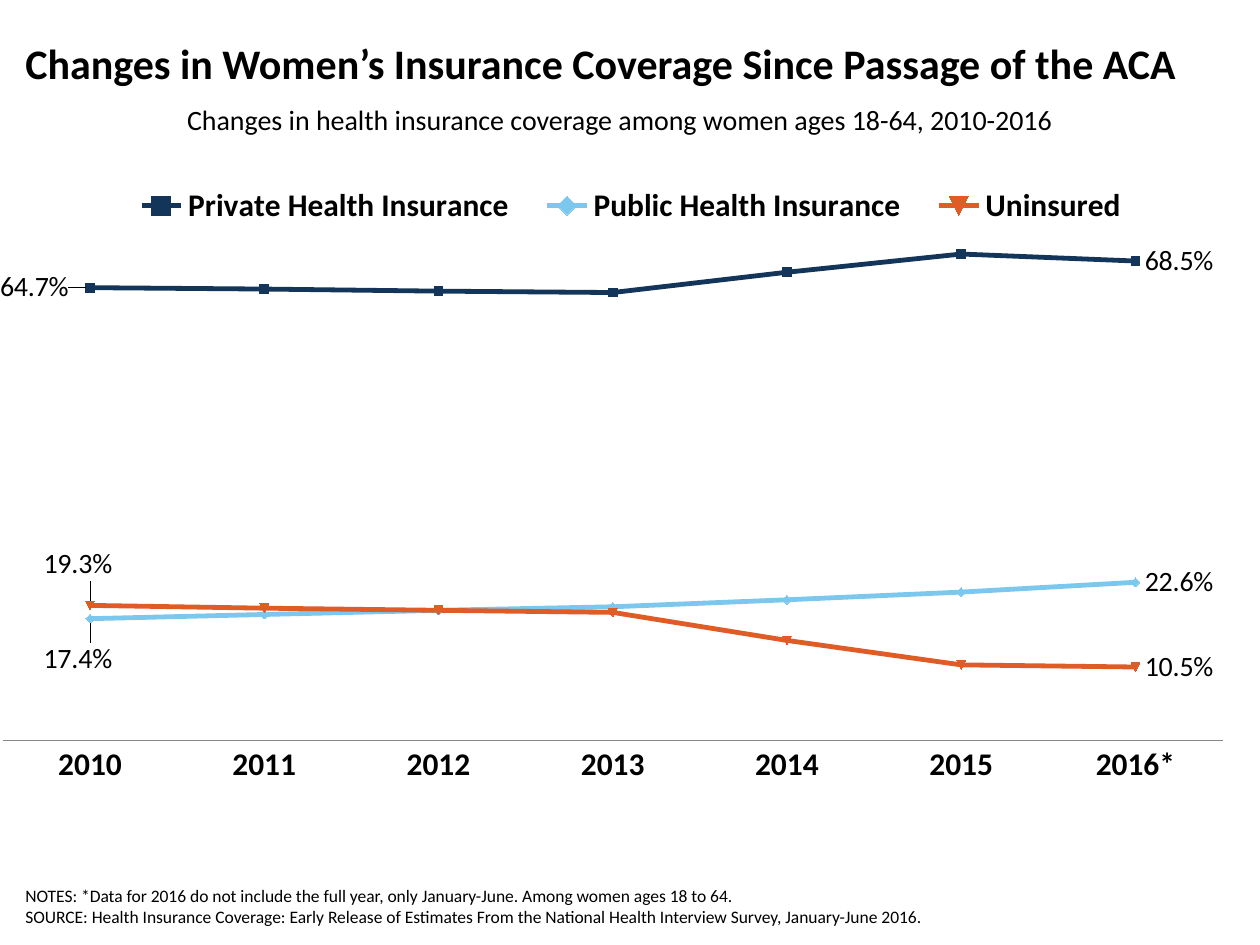
from lxml import etree
from pptx import Presentation
from pptx import util as u
from pptx.chart.data import CategoryChartData
from pptx.dml.color import RGBColor
from pptx.enum import chart as kinds, text
from pptx.oxml import ns

PX = 914400 // 126
BLACK = RGBColor(0x00, 0x00, 0x00)
GRAY = RGBColor(0x87, 0x87, 0x87)
NAVY = RGBColor(0x13, 0x35, 0x59)
SKY = RGBColor(0x7B, 0xC7, 0xED)
ORANGE = RGBColor(0xE0, 0x5C, 0x26)


def style_font(font, size, bold=False):
    values = {"name": "Calibri", "size": u.Pt(size), "bold": bold}
    for name, value in values.items():
        setattr(font, name, value)
    font.color.rgb = BLACK


def add_layout(parent, index, **values):
    layout = etree.Element(ns.qn("c:layout"))
    manual = etree.SubElement(layout, ns.qn("c:manualLayout"))
    for name, value in values.items():
        etree.SubElement(manual, ns.qn(f"c:{name}")).set("val", str(value))
    for old in parent.findall(ns.qn("c:layout")):
        parent.remove(old)
    parent.insert(index, layout)


deck = Presentation()
deck.slide_width, deck.slide_height = 1260 * PX, 945 * PX
page = deck.slides.add_slide(deck.slide_layouts[6])

coverage = CategoryChartData(number_format="0.0%")
coverage.categories = ["2010", "2011", "2012", "2013", "2014", "2015", "2016*"]
position = kinds.XL_LABEL_POSITION
groups = [
    ("Private Health Insurance", NAVY, position.LEFT, -0.01, 0,
     [0.647, 0.645, 0.642, 0.64, 0.669, 0.695, 0.685]),
    ("Public Health Insurance", SKY, position.BELOW, -0.01, 0.02,
     [0.174, 0.18, 0.186, 0.191, 0.201, 0.212, 0.226]),
    ("Uninsured", ORANGE, position.ABOVE, -0.01, -0.02,
     [0.193, 0.189, 0.186, 0.183, 0.143, 0.108, 0.105]),
]
for name, *_, values in groups:
    coverage.add_series(name, values)

chart = page.shapes.add_chart(
    kinds.XL_CHART_TYPE.LINE_MARKERS, 0, 116 * PX, 1235 * PX, 718 * PX, coverage
).chart
style_font(chart.font, 18)
chart.has_title = False
chart.has_legend = True
chart.legend.position = kinds.XL_LEGEND_POSITION.TOP
chart.legend.include_in_layout = False
style_font(chart.legend.font, 18, True)
add_layout(chart.legend._element, 1, xMode="edge", yMode="edge",
           x=0.09, y=0.09, w=0.84, h=0.07)
add_layout(chart._chartSpace.chart.plotArea, 0, layoutTarget="inner",
           xMode="edge", yMode="edge", x=0, y=0.09, w=0.99, h=0.78)

years, share = chart.category_axis, chart.value_axis
years.major_tick_mark = kinds.XL_TICK_MARK.NONE
years.format.line.color.rgb = GRAY
years.format.line.width = u.Pt(0.75)
style_font(years.tick_labels.font, 18, True)
for name, value in {"visible": False, "has_major_gridlines": False,
                    "minimum_scale": 0, "maximum_scale": 0.8}.items():
    setattr(share, name, value)

for series, (_, color, first_side, shift_x, shift_y, _) in zip(chart.plots[0].series, groups):
    series.smooth = False
    series.format.line.color.rgb = color
    series.format.line.width = u.Pt(2.75)
    marker = series.marker
    marker.style = kinds.XL_MARKER_STYLE.AUTOMATIC
    marker.size = 5
    marker.format.fill.solid()
    marker.format.fill.fore_color.rgb = color
    marker.format.line.color.rgb = color
    for point, side in ((0, first_side), (6, position.RIGHT)):
        label = series.points[point].data_label
        style_font(label.font, 16)
        label.position = side
    series.data_labels.show_value = False
    first_label = series._element.xpath("c:dLbls/c:dLbl")[0]
    add_layout(first_label, 1, x=shift_x, y=shift_y)

anchor, align = text.MSO_ANCHOR, text.PP_ALIGN
boxes = [
    (13, 0, 1235, 126, anchor.MIDDLE, align.LEFT, 24, True,
     ["Changes in Women’s Insurance Coverage Since Passage of the ACA"]),
    (158, 96, 924, 47, anchor.TOP, align.CENTER, 16, False,
     ["Changes in health insurance coverage among women ages 18-64, 2010-2016"]),
    (13, 857, 1147, 76, anchor.BOTTOM, align.LEFT, 10, False,
     ["NOTES: *Data for 2016 do not include the full year, only January-June. Among women ages 18 to 64.",
      "SOURCE: Health Insurance Coverage: Early Release of Estimates From the National Health Interview Survey, January-June 2016."]),
]
for left, top, width, height, vertical, side, size, bold, lines in boxes:
    box = page.shapes.add_textbox(left * PX, top * PX, width * PX, height * PX)
    frame = box.text_frame
    frame.word_wrap = True
    frame.vertical_anchor = vertical
    frame.text = "\n".join(lines)
    for para in frame.paragraphs:
        para.alignment = side
        for span in para.runs:
            style_font(span.font, size, bold)

deck.save("out.pptx")
